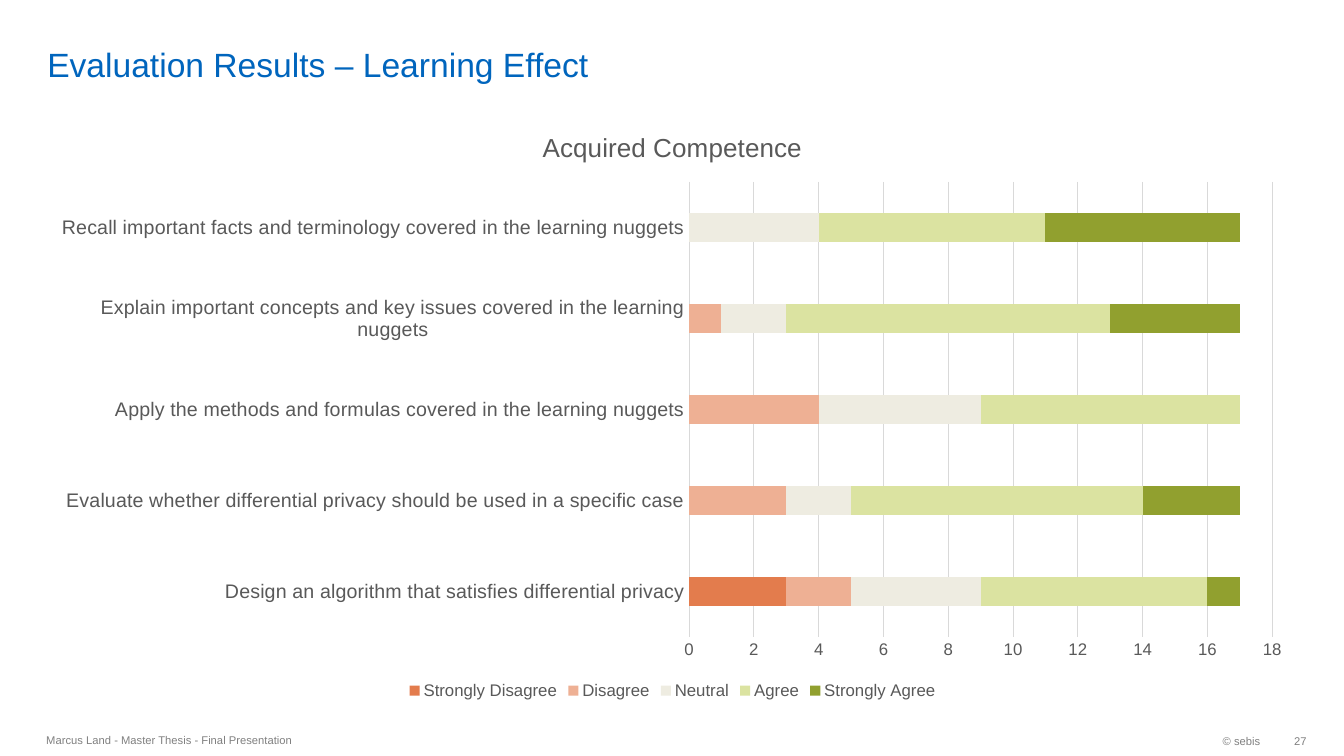
from dataclasses import dataclass

from lxml import etree
from pptx import Presentation
from pptx.chart.data import CategoryChartData
from pptx.dml.color import RGBColor
from pptx.enum.chart import XL_CHART_TYPE, XL_LEGEND_POSITION, XL_TICK_MARK
from pptx.enum.text import MSO_ANCHOR, PP_ALIGN
from pptx.oxml.ns import qn
from pptx.util import Inches, Pt

BAR_STACKED = XL_CHART_TYPE.BAR_STACKED
LEGEND_BOTTOM = XL_LEGEND_POSITION.BOTTOM
NO_TICK = XL_TICK_MARK.NONE
MIDDLE, BOTTOM = MSO_ANCHOR.MIDDLE, MSO_ANCHOR.BOTTOM
LEFT, RIGHT = PP_ALIGN.LEFT, PP_ALIGN.RIGHT
SLIDE_WIDTH, SLIDE_HEIGHT = Inches(13.33), Inches(7.5)


@dataclass(frozen=True)
class Theme:
    font: str = "Arial"
    heading: str = "0065BD"
    footer: str = "808080"
    chart_text: str = "595959"
    grid: str = "D9D9D9"
    heading_size: float = 24
    chart_title_size: float = 18.6
    category_size: float = 14
    scale_size: float = 12
    footer_size: float = 8


@dataclass(frozen=True)
class Box:
    """Position and size in percent of the surrounding area."""

    left: float
    top: float
    width: float
    height: float

    def on_slide(self) -> tuple[int, int, int, int]:
        return (
            int(SLIDE_WIDTH * self.left / 100),
            int(SLIDE_HEIGHT * self.top / 100),
            int(SLIDE_WIDTH * self.width / 100),
            int(SLIDE_HEIGHT * self.height / 100),
        )


@dataclass(frozen=True)
class Answer:
    name: str
    votes: tuple[int, ...]
    color: str


@dataclass(frozen=True)
class FooterItem:
    text: str
    box: Box
    align: PP_ALIGN = LEFT
    right_inset: float = 0.1


THEME = Theme()
HEADING_BOX = Box(2.78, 0.67, 86.87, 10.53)
CHART_BOX = Box(2.78, 14.27, 94.52, 78.8)
PLOT_BOX = Box(51.31, 12.44, 45.9, 76.4)

COMPETENCES = (
    "Design an algorithm that satisfies differential privacy",
    "Evaluate whether differential privacy should be used in a specific case",
    "Apply the methods and formulas covered in the learning nuggets",
    "Explain important concepts and key issues covered in the learning nuggets",
    "Recall important facts and terminology covered in the learning nuggets",
)
ANSWERS = (
    Answer("Strongly Disagree", (3, 0, 0, 0, 0), "E37C4D"),
    Answer("Disagree", (2, 3, 4, 1, 0), "EEB094"),
    Answer("Neutral", (4, 2, 5, 2, 4), "EEECE1"),
    Answer("Agree", (7, 9, 8, 10, 7), "DBE3A1"),
    Answer("Strongly Agree", (1, 3, 0, 4, 6), "91A02F"),
)
FOOTER = (
    FooterItem("Marcus Land - Master Thesis - Final Presentation", Box(2.7, 95.73, 47.26, 4.27)),
    FooterItem("© sebis", Box(76.97, 95.87, 17.55, 4.27), RIGHT),
    FooterItem("27", Box(94.52, 95.87, 2.7, 4.27), RIGHT, 0),
)


def format_font(font, size: float, color: str) -> None:
    font.name = THEME.font
    font.size = Pt(size)
    font.bold = False
    font.color.rgb = RGBColor.from_string(color)


def format_line(line, color: str) -> None:
    line.width = Pt(0.75)
    line.color.rgb = RGBColor.from_string(color)


def add_text(slide, text: str, box: Box, *, size: float, color: str,
             anchor=MIDDLE, align=LEFT, right_inset: float = 0.1,
             vertical_inset: float = 0.05) -> None:
    frame = slide.shapes.add_textbox(*box.on_slide()).text_frame
    frame.word_wrap = True
    frame.vertical_anchor = anchor
    frame.margin_right = Inches(right_inset)
    frame.margin_top = frame.margin_bottom = Inches(vertical_inset)
    paragraph = frame.paragraphs[0]
    paragraph.alignment = align
    run = paragraph.add_run()
    run.text = text
    format_font(run.font, size, color)


def place_plot(chart, box: Box) -> None:
    plot_area = chart.plots[0]._element.getparent()
    for old_layout in plot_area.findall(qn("c:layout")):
        plot_area.remove(old_layout)
    layout = etree.Element(qn("c:layout"))
    manual = etree.SubElement(layout, qn("c:manualLayout"))
    settings = (
        ("layoutTarget", "inner"), ("xMode", "edge"), ("yMode", "edge"),
        ("x", box.left / 100), ("y", box.top / 100),
        ("w", box.width / 100), ("h", box.height / 100),
    )
    for tag, value in settings:
        etree.SubElement(manual, qn(f"c:{tag}")).set("val", str(value))
    plot_area.insert(0, layout)


def format_axes(chart) -> None:
    category_axis, value_axis = chart.category_axis, chart.value_axis
    for axis, size in ((category_axis, THEME.category_size), (value_axis, THEME.scale_size)):
        axis.major_tick_mark = axis.minor_tick_mark = NO_TICK
        format_font(axis.tick_labels.font, size, THEME.chart_text)
    category_axis.has_major_gridlines = False
    format_line(category_axis.format.line, THEME.grid)
    value_axis.format.line.fill.background()
    value_axis.has_major_gridlines = True
    format_line(value_axis.major_gridlines.format.line, THEME.grid)
    value_axis.minimum_scale, value_axis.maximum_scale, value_axis.major_unit = 0, 18, 2


def add_competence_chart(slide) -> None:
    data = CategoryChartData(number_format="General")
    data.categories = COMPETENCES
    for answer in ANSWERS:
        data.add_series(answer.name, answer.votes)
    chart = slide.shapes.add_chart(BAR_STACKED, *CHART_BOX.on_slide(), data).chart
    format_font(chart.font, THEME.scale_size, THEME.chart_text)

    chart.has_title = True
    title = chart.chart_title
    title.include_in_layout = False
    run = title.text_frame.paragraphs[0].add_run()
    run.text = "Acquired Competence"
    format_font(run.font, THEME.chart_title_size, THEME.chart_text)

    chart.has_legend = True
    chart.legend.position = LEGEND_BOTTOM
    chart.legend.include_in_layout = False
    format_font(chart.legend.font, THEME.scale_size, THEME.chart_text)

    plot = chart.plots[0]
    plot.gap_width, plot.overlap = 219, 100
    plot.vary_by_categories = False
    for series, answer in zip(plot.series, ANSWERS):
        series.format.fill.solid()
        series.format.fill.fore_color.rgb = RGBColor.from_string(answer.color)
    format_axes(chart)
    place_plot(chart, PLOT_BOX)


def main() -> None:
    presentation = Presentation()
    presentation.slide_width, presentation.slide_height = SLIDE_WIDTH, SLIDE_HEIGHT
    slide = presentation.slides.add_slide(presentation.slide_layouts[6])
    add_text(slide, "Evaluation Results – Learning Effect", HEADING_BOX,
             size=THEME.heading_size, color=THEME.heading, anchor=BOTTOM, vertical_inset=0)
    add_competence_chart(slide)
    for item in FOOTER:
        add_text(slide, item.text, item.box, size=THEME.footer_size, color=THEME.footer,
                 align=item.align, right_inset=item.right_inset)
    presentation.save("out.pptx")


if __name__ == "__main__":
    main()
